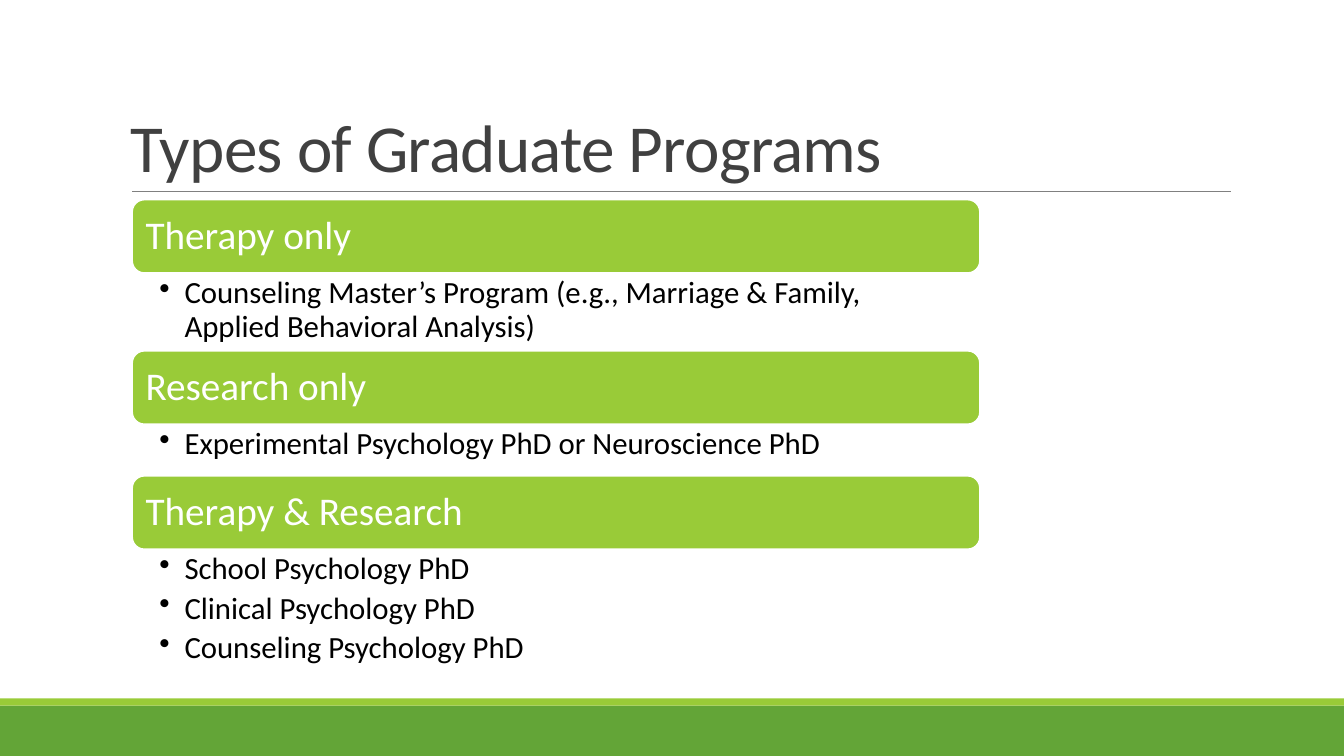
from dataclasses import dataclass

from lxml import etree
from pptx import Presentation
from pptx import util as u
from pptx.dml.color import RGBColor
from pptx.enum import shapes, text
from pptx.oxml.ns import qn


@dataclass(frozen=True)
class Theme:
    font: str = "Calibri"
    dark_green: str = "63A537"
    green: str = "99CB38"
    white: str = "FFFFFF"
    black: str = "000000"
    title_color: str = "404040"
    rule_color: str = "808080"
    title_size: float = 48
    heading_size: float = 28
    detail_size: float = 22


PROGRAMS = [
    ("Therapy only", 0.77,
     ["Counseling Master’s Program (e.g., Marriage & Family, Applied Behavioral Analysis)"]),
    ("Research only", 0.51,
     ["Experimental Psychology PhD or Neuroscience PhD"]),
    ("Therapy & Research", 1.24,
     ["School Psychology PhD", "Clinical Psychology PhD", "Counseling Psychology PhD"]),
]
LIST_LEFT, LIST_TOP, LIST_WIDTH = 1.31, 1.98, 8.41
HEADING_HEIGHT = 0.73


class SlideBuilder:
    def __init__(self, slide, theme):
        self.slide = slide
        self.theme = theme

    def block(self, kind, place, fill, border=None):
        shape = self.slide.shapes.add_shape(kind, *map(u.Inches, place))
        shape.shadow.inherit = False
        shape.fill.solid()
        shape.fill.fore_color.rgb = RGBColor.from_string(fill)
        if border:
            shape.line.color.rgb = RGBColor.from_string(border)
            shape.line.width = u.Pt(1.25)
        else:
            shape.line.fill.background()
        return shape

    def rule(self, left, right, top):
        line = self.slide.shapes.add_connector(
            shapes.MSO_CONNECTOR.STRAIGHT, *map(u.Inches, (left, top, right, top)))
        line.line.color.rgb = RGBColor.from_string(self.theme.rule_color)
        line.line.width = u.Pt(0.5)
        etree.SubElement(line._element.spPr, qn("a:effectLst"))

    def set_text(self, shape, lines, size, color, anchor, insets, spacing=0.9, after=0):
        """Fill a shape with one paragraph per line; insets run left, top, right, bottom."""
        frame = shape.text_frame
        sides = ("margin_left", "margin_top", "margin_right", "margin_bottom")
        frame_format = dict(zip(sides, map(u.Inches, insets)))
        frame_format.update(word_wrap=True, vertical_anchor=anchor)
        for name, value in frame_format.items():
            setattr(frame, name, value)
        for index, line in enumerate(lines):
            para = frame.add_paragraph() if index else frame.paragraphs[0]
            para_format = {"alignment": text.PP_ALIGN.LEFT, "line_spacing": spacing,
                           "space_after": u.Pt(after)}
            for name, value in para_format.items():
                setattr(para, name, value)
            span = para.add_run()
            span.text = line
            span.font.name = self.theme.font
            span.font.size = u.Pt(size)
            span.font.color.rgb = RGBColor.from_string(color)
        return frame

    def text_box(self, place):
        return self.slide.shapes.add_textbox(*map(u.Inches, place))

    def title(self, words, place):
        frame = self.set_text(self.text_box(place), [words], self.theme.title_size,
                              self.theme.title_color, text.MSO_ANCHOR.BOTTOM,
                              (0.1, 0.05, 0.1, 0.05), spacing=0.85)
        frame.paragraphs[0].runs[0].font._element.set("spc", "-50")

    def heading(self, words, place):
        bar = self.block(shapes.MSO_SHAPE.ROUNDED_RECTANGLE, place,
                         self.theme.green, self.theme.white)
        self.set_text(bar, [words], self.theme.heading_size, self.theme.white,
                      text.MSO_ANCHOR.MIDDLE, (0.1, 0.1, 0.1, 0.1))

    def bullets(self, lines, place):
        frame = self.set_text(self.text_box(place), lines, self.theme.detail_size,
                              self.theme.black, text.MSO_ANCHOR.TOP,
                              (0.27, 0.04, 0.22, 0.04), after=4.4)
        indent = u.Inches(0.25)
        for para in frame.paragraphs:
            properties = para._p.get_or_add_pPr()
            properties.set("marL", str(indent))
            properties.set("indent", str(-indent))
            etree.SubElement(properties, qn("a:buChar"), char="•")


def main():
    deck = Presentation()
    deck.slide_width, deck.slide_height = u.Inches(13.33), u.Inches(7.5)
    theme = Theme()
    page = SlideBuilder(deck.slides.add_slide(deck.slide_layouts[6]), theme)

    page.block(shapes.MSO_SHAPE.RECTANGLE, (0, 7, 13.33, 0.5), theme.dark_green)
    page.block(shapes.MSO_SHAPE.RECTANGLE, (0, 6.93, 13.33, 0.07), theme.green)
    page.rule(1.31, 12.21, 1.9)
    page.title("Types of Graduate Programs", (1.2, 0.31, 11, 1.59))

    top = LIST_TOP
    for heading, detail_height, details in PROGRAMS:
        page.heading(heading, (LIST_LEFT, top, LIST_WIDTH, HEADING_HEIGHT))
        top += HEADING_HEIGHT
        page.bullets(details, (LIST_LEFT, top, LIST_WIDTH, detail_height))
        top += detail_height

    deck.save("out.pptx")


if __name__ == "__main__":
    main()
